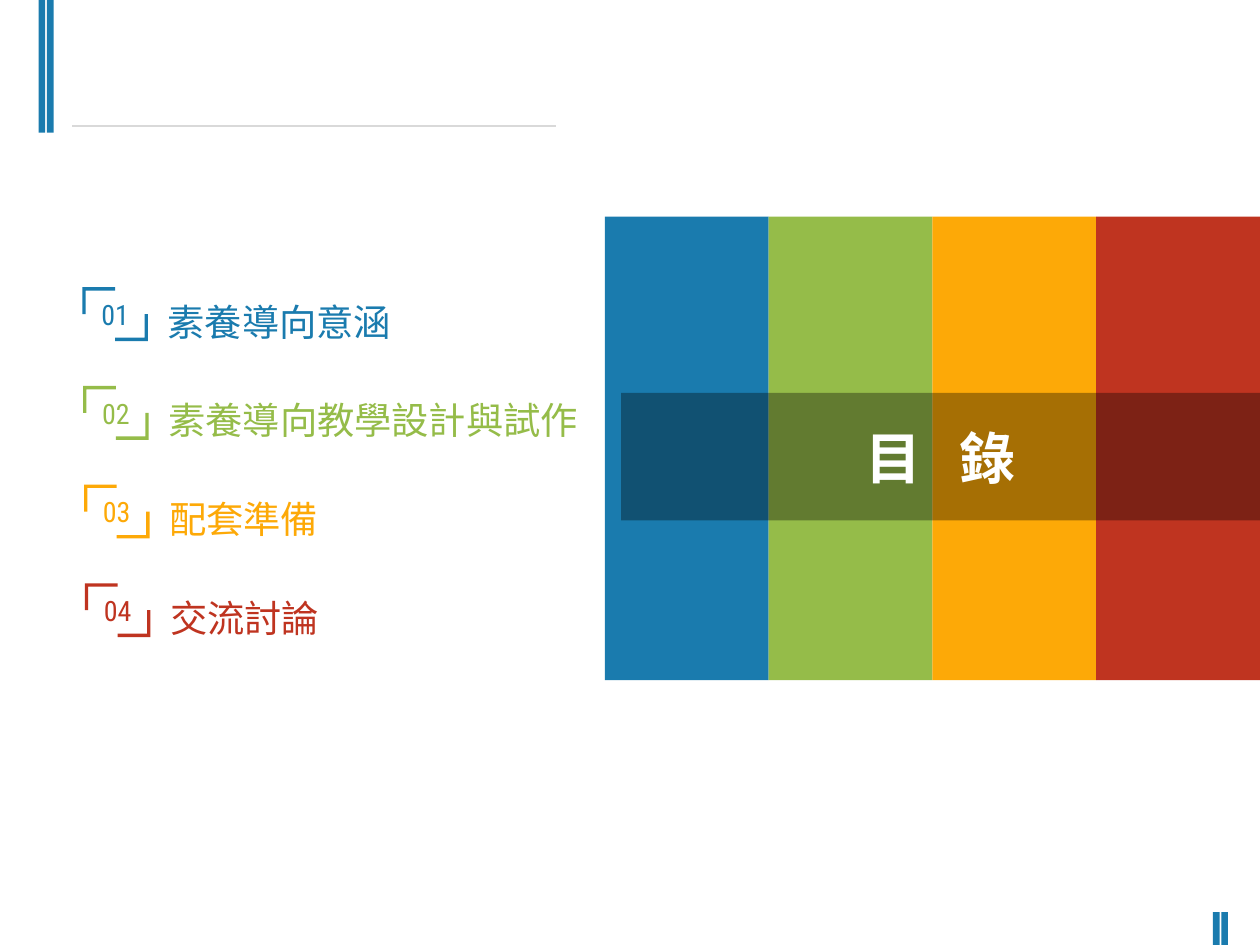
from collections import namedtuple
from dataclasses import dataclass

from lxml import etree
from pptx import Presentation
from pptx.dml.color import RGBColor
from pptx.enum import shapes, text
from pptx.oxml import ns
from pptx.util import Inches, Pt

Box = namedtuple("Box", "left top width height")


@dataclass(frozen=True)
class Theme:
    accents: tuple = ("1A7BAE", "95BC49", "FDA907", "BF3420")
    rule: str = "D9D9D9"
    band: str = "000000"
    title: str = "FFFFFF"
    topic_font: str = "Arial"
    display_font: str = "Roboto Condensed"
    topic_size: int = 16
    number_size: int = 12
    title_size: int = 24


THEME = Theme()
WIDTH = 7.5
HEIGHT = WIDTH * 3 / 4
TOPICS = ("素養導向意涵", "素養導向教學設計與試作", "配套準備", "交流討論")


def share(box, left, top, width, height):
    """Return the part of a box given by shares of its size."""
    return Box(box.left + left * box.width, box.top + top * box.height,
               width * box.width, height * box.height)


def paint(shape, color):
    shape.shadow.inherit = False
    shape.fill.solid()
    shape.fill.fore_color.rgb = RGBColor.from_string(color)
    shape.line.fill.background()


def add_block(slide, box, color):
    block = slide.shapes.add_shape(shapes.MSO_SHAPE.RECTANGLE, *map(Inches, box))
    paint(block, color)
    return block


def style_text(frame, font, size, color, bold=False):
    for run in frame.paragraphs[0].runs:
        run.font.name = font
        run.font.size = Pt(size)
        run.font.bold = bold
        run.font.color.rgb = RGBColor.from_string(color)


def center_text(frame):
    frame.vertical_anchor = text.MSO_ANCHOR.MIDDLE
    frame.paragraphs[0].alignment = text.PP_ALIGN.CENTER


def add_twin_bars(slide, box):
    bar = 0.04
    for left in (box.left, box.left + box.width - bar):
        add_block(slide, Box(left, box.top, bar, box.height), THEME.accents[0])


def add_header_rule(slide, box):
    y = Inches(box.top)
    rule = slide.shapes.add_connector(shapes.MSO_CONNECTOR.STRAIGHT, Inches(box.left), y,
                                      Inches(box.left + box.width), y)
    rule.line.color.rgb = RGBColor.from_string(THEME.rule)
    rule.line.width = Pt(0.75)
    etree.SubElement(rule._element.spPr, ns.qn("a:effectLst"))


def add_number_bracket(slide, box, number, color):
    """Two opposite corners around a number, drawn as one outline."""
    thick = 0.02
    arm, side = box.width / 2, box.height / 2
    upper = [(0, 0), (arm, 0), (arm, thick), (thick, thick), (thick, side), (0, side)]
    lower = [(box.width - x, box.height - y) for x, y in upper]
    upper, lower = ([(Inches(box.left + x), Inches(box.top + y)) for x, y in corner]
                    for corner in (upper, lower))
    builder = slide.shapes.build_freeform(*upper[0])
    builder.add_line_segments(upper[1:], close=True)
    builder.move_to(*lower[0])
    builder.add_line_segments(lower[1:], close=True)
    bracket = builder.convert_to_shape()
    paint(bracket, color)
    frame = bracket.text_frame
    frame.margin_left = frame.margin_right = 0
    frame.text = number
    center_text(frame)
    style_text(frame, THEME.display_font, THEME.number_size, color)


def add_topic_list(slide, box):
    pitch, drift = box.height / len(TOPICS), 0.005
    for row, (topic, color) in enumerate(zip(TOPICS, THEME.accents)):
        left, top = box.left + row * drift, box.top + row * pitch
        label = slide.shapes.add_textbox(
            *map(Inches, (left + 0.41, top + 0.02, box.width - 0.41, 0.37)))
        label.text_frame.word_wrap = True
        label.text_frame.text = topic
        style_text(label.text_frame, THEME.topic_font, THEME.topic_size, color)
        add_number_bracket(slide, Box(left, top, 0.39, 0.32), f"{row + 1:02d}", color)


def add_title_panel(slide, box):
    # Colour stripes
    step = 1 / len(THEME.accents)
    for column, color in enumerate(THEME.accents):
        add_block(slide, share(box, column * step, 0, step, 1), color)

    # Translucent band with the title
    band = add_block(slide, share(box, 0.025, 0.38, 0.975, 0.275), THEME.band)
    tint = band.fill._xPr.find(".//" + ns.qn("a:srgbClr"))
    etree.SubElement(tint, ns.qn("a:alpha"), val="34000")
    heading = band.text_frame.paragraphs[0]
    for part in ("目", " ", "錄"):
        heading.add_run().text = part
    heading.runs[1]._r.get_or_add_rPr().set("spc", "1090")
    center_text(band.text_frame)
    style_text(band.text_frame, THEME.display_font, THEME.title_size, THEME.title, bold=True)


def build_contents_slide(deck):
    slide = deck.slides.add_slide(deck.slide_layouts[6])
    # Frame marks
    add_twin_bars(slide, Box(0.23, 0, 0.09, 0.79))
    add_twin_bars(slide, Box(7.22, 5.43, 0.09, HEIGHT - 5.43))
    add_header_rule(slide, Box(0.43, 0.75, 2.88, 0))
    # Contents
    add_topic_list(slide, Box(0.49, 1.71, 3.39, 2.35))
    add_title_panel(slide, Box(3.6, 1.29, WIDTH - 3.6, 2.76))


def main():
    deck = Presentation()
    deck.slide_width, deck.slide_height = Inches(WIDTH), Inches(HEIGHT)
    build_contents_slide(deck)
    deck.save("out.pptx")


if __name__ == "__main__":
    main()
